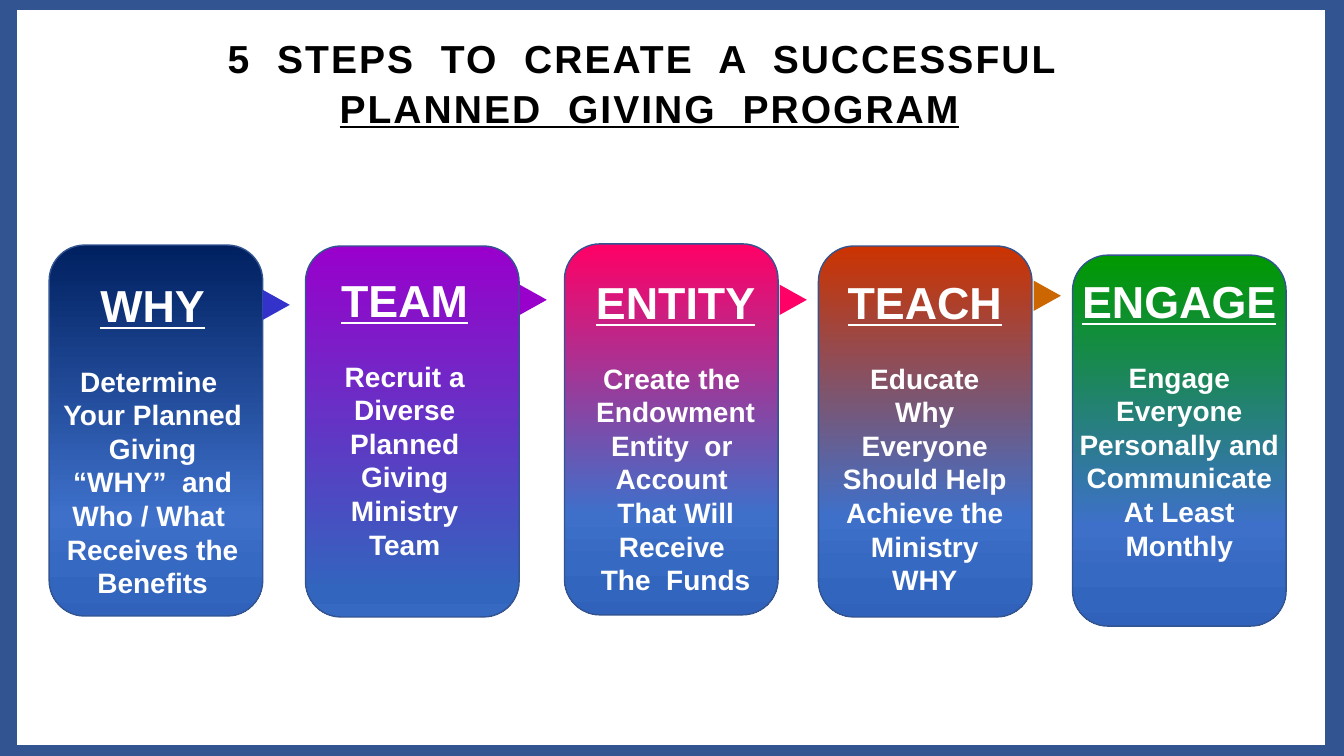
from collections import namedtuple
from lxml import etree
from pptx import Presentation
from pptx.dml.color import RGBColor
from pptx.enum.shapes import MSO_SHAPE as Preset
from pptx.enum.text import MSO_ANCHOR as Anchor, MSO_AUTO_SIZE as AutoSize, PP_ALIGN as Align
from pptx.oxml.ns import qn
from pptx.util import Pt

BLACK = RGBColor(0x00, 0x00, 0x00)
WHITE = RGBColor(0xFF, 0xFF, 0xFF)
FRAME_BLUE = RGBColor(0x32, 0x54, 0x91)
NAVY = RGBColor(0x00, 0x20, 0x60)
INDIGO = RGBColor(0x33, 0x33, 0xCC)
PURPLE = RGBColor(0x99, 0x00, 0xCC)
PINK = RGBColor(0xFF, 0x00, 0x66)
RUST = RGBColor(0xCC, 0x33, 0x00)
ORANGE = RGBColor(0xCC, 0x66, 0x00)
GREEN = RGBColor(0x00, 0x99, 0x00)
LIGHT_BLUE = RGBColor(0x3E, 0x70, 0xCA)
SOFT_BLUE = RGBColor(0x36, 0x69, 0xC2)
MID_BLUE = RGBColor(0x32, 0x65, 0xBE)
DEEP_BLUE = RGBColor(0x30, 0x62, 0xBB)

# Content: card and text are (left, top), lengths in points
FONT = "Arial"
TITLE_RUNS = [("5  STEPS  TO  CREATE  A  SUCCESSFUL ", False),
              (" PLANNED  GIVING  PROGRAM", True)]
FADE = [(73, LIGHT_BLUE), (86, SOFT_BLUE), (93, MID_BLUE), (100, DEEP_BLUE)]
LATE_FADE = [(93, MID_BLUE), (100, SOFT_BLUE)]

Step = namedtuple("Step", "heading body color fade card text text_width arrow arrow_color")
STEPS = [
    Step("WHY", "Determine  Your Planned  Giving  “WHY”  and Who / What  Receives the Benefits",
         NAVY, FADE, (35.1, 175), (37.4, 195.1), 143.3, (186.5, 208.1), INDIGO),
    Step("TEAM", "Recruit a Diverse Planned Giving Ministry Team",
         PURPLE, LATE_FADE, (218.2, 175.7), (221.8, 191.5), 134.6, (370.1, 204.5), PURPLE),
    Step("ENTITY", "Create the  Endowment Entity  or  Account  That Will Receive  The  Funds",
         PINK, FADE, (403.2, 174.2), (415.4, 193), 134.6, (555.8, 204.5), PINK),
    Step("TEACH", "Educate Why Everyone Should Help Achieve the Ministry WHY",
         RUST, FADE, (584.6, 175.7), (593.3, 193), 134.6, (737.3, 201.6), ORANGE),
    Step("ENGAGE", "Engage Everyone Personally and Communicate At Least Monthly",
         GREEN, FADE, (766.1, 182.2), (763.2, 192.2), 158.4, None, None),
]
CARD_SIZE = (152.6, 265)
ARROW_SIZE = (21.6, 19.4)
TEXT_HEIGHT = 240
BLANK_LINE = 23


def add_box(slide, preset, position, size):
    shape = slide.shapes.add_shape(preset, *map(Pt, position + size))
    shape.shadow.inherit = False
    return shape


def fill_gradient(shape, stops):
    shape.fill.gradient()
    shape.fill.gradient_angle = 270
    stop_list = shape._element.spPr.find(".//" + qn("a:gsLst"))
    for stop in list(stop_list):
        stop_list.remove(stop)
    for percent, color in stops:
        stop = etree.SubElement(stop_list, qn("a:gs"), pos=str(percent * 1000))
        etree.SubElement(stop, qn("a:srgbClr"), val=str(color))


def add_run(paragraph, text, size, color, underline):
    run = paragraph.add_run()
    run.text = text
    run.font.name = FONT
    run.font.size = Pt(size)
    run.font.bold = True
    run.font.underline = underline
    run.font.color.rgb = color
    return run


def add_title(slide):
    title = slide.shapes.title
    title.left, title.top, title.width, title.height = map(Pt, (137.5, 20.2, 653, 76.3))
    frame = title.text_frame
    frame.auto_size = AutoSize.NONE
    frame.word_wrap = True
    frame.vertical_anchor = Anchor.MIDDLE
    paragraph = frame.paragraphs[0]
    paragraph.alignment = Align.CENTER
    paragraph.line_spacing = 1.05
    for text, underline in TITLE_RUNS:
        run = add_run(paragraph, text, 27.9, BLACK, underline)
        run.font._element.set("spc", "150")


def add_step(slide, step):
    # Card
    card = add_box(slide, Preset.ROUNDED_RECTANGLE, step.card, CARD_SIZE)
    fill_gradient(card, [(0, step.color)] + step.fade)
    card.line.color.rgb = FRAME_BLUE
    card.line.width = Pt(1)

    # Arrow to the next card
    if step.arrow:
        arrow = add_box(slide, Preset.ISOSCELES_TRIANGLE, step.arrow, ARROW_SIZE)
        arrow.rotation = 90
        arrow.fill.solid()
        arrow.fill.fore_color.rgb = step.arrow_color
        arrow.line.fill.background()

    # Heading and explanation
    box = slide.shapes.add_textbox(*map(Pt, step.text + (step.text_width, TEXT_HEIGHT)))
    frame = box.text_frame
    frame.word_wrap = True
    heading, body = frame.paragraphs[0], frame.add_paragraph()
    heading.alignment = body.alignment = Align.CENTER
    body.space_before = Pt(BLANK_LINE)
    add_run(heading, step.heading, 32, WHITE, True)
    add_run(body, step.body, 20, WHITE, False)


def main():
    presentation = Presentation()
    presentation.slide_width, presentation.slide_height = Pt(960), Pt(540)
    slide = presentation.slides.add_slide(presentation.slide_layouts[5])
    slide.background.fill.solid()
    slide.background.fill.fore_color.rgb = BLACK

    # White page with a blue frame, behind the title
    page = add_box(slide, Preset.RECTANGLE, (-0.7, -5.8), (959.8, 550.8))
    page.fill.solid()
    page.fill.fore_color.rgb = WHITE
    page.line.color.rgb = FRAME_BLUE
    page.line.width = Pt(25.75)
    slide.shapes.title._element.addprevious(page._element)

    add_title(slide)
    for step in STEPS:
        add_step(slide, step)
    presentation.save("out.pptx")


if __name__ == "__main__":
    main()
